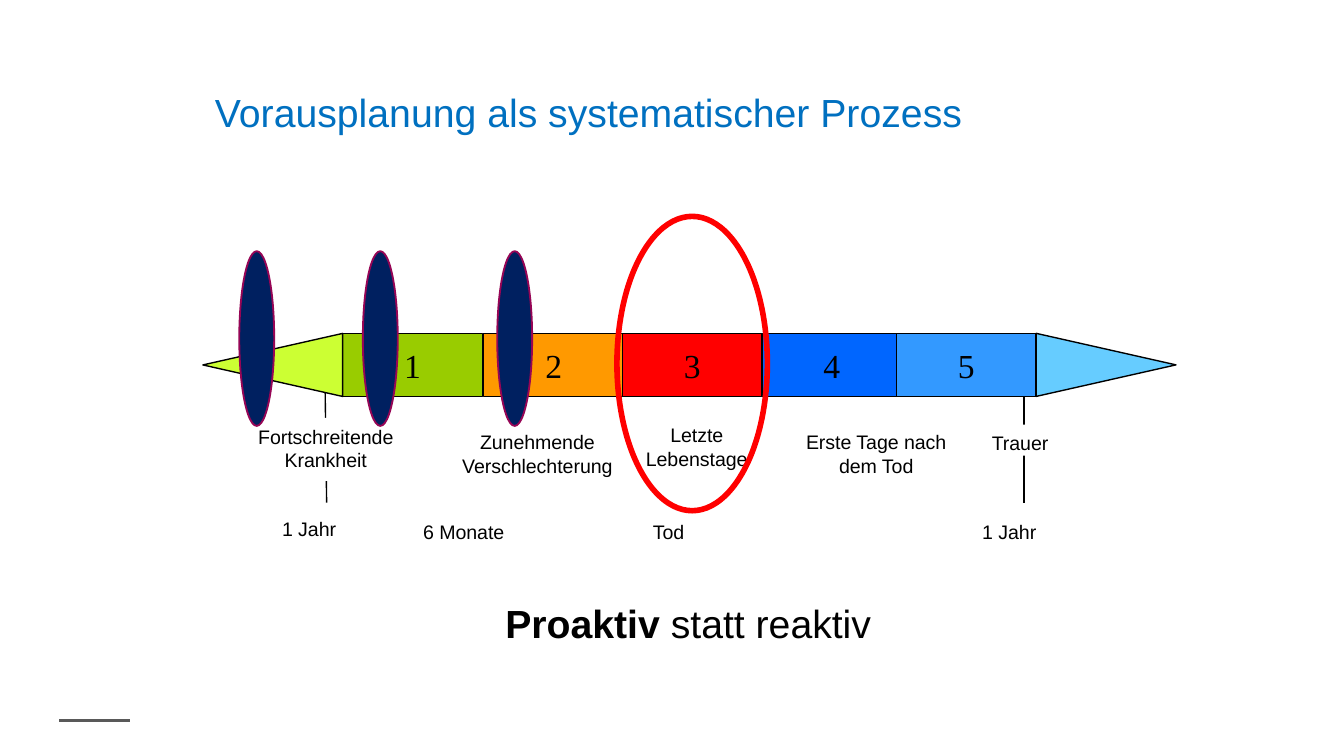
from lxml import etree
from pptx import Presentation
from pptx.dml.color import RGBColor
from pptx.enum.shapes import MSO_CONNECTOR, MSO_SHAPE
from pptx.enum.text import MSO_ANCHOR, PP_ALIGN
from pptx.oxml.ns import qn
from pptx.util import Pt

RECT, OVAL, TRIANGLE = MSO_SHAPE.RECTANGLE, MSO_SHAPE.OVAL, MSO_SHAPE.ISOSCELES_TRIANGLE
LEFT, CENTER = PP_ALIGN.LEFT, PP_ALIGN.CENTER
TOP, MIDDLE = MSO_ANCHOR.TOP, MSO_ANCHOR.MIDDLE

THEME = {
    "sans": "Arial", "serif": "Times New Roman",
    "heading": 21, "number": 18, "label": 10.5,
    "text": "000000", "title": "0070C0", "paper": "FFFFFF", "rule": "595959",
    "ring": "FF0000", "oval": "002060", "oval_line": "960555",
    "past": "CCFF33", "future": "66CCFF",
}

TITLE = "Vorausplanung als systematischer Prozess"
SLOGAN = [("Proaktiv ", True), ("statt reaktiv", False)]

# number, left, fill
PHASES = [
    ("1", 183.6, "99CC00"),
    ("2", 259.2, "FF9900"),
    ("3", 333.4, "FF0000"),
    ("4", 408.2, "0066FF"),
    ("5", 480.2, "3399FF"),
]
# text, left, top, width, height
PHASE_LABELS = [
    ("Fortschreitende Krankheit", 128.9, 223.9, 91.4, 33.8),
    ("Zunehmende Verschlechterung", 235.4, 227, 105.1, 30.2),
    ("Letzte Lebenstage", 331.2, 223.2, 84.2, 33.1),
    ("Erste Tage nach dem Tod", 416.9, 227, 105.1, 33.1),
    ("Trauer", 507.6, 227.5, 77.8, 16.6),
]
TIME_LABELS = [
    ("1 Jahr", 144, 273.6, 57, 25),
    ("6 Monate", 219.6, 275, 68, 25),
    ("Tod", 342.7, 275, 57, 25),
    ("1 Jahr", 519.1, 275, 57, 25),
]
# x at the top, x at the bottom
TIME_MARKS = [(174.2, 175), (548.6, 548.6)]
OVAL_LEFTS = [128.2, 194.4, 266.4]

BAR_TOP, BAR_H, PHASE_W = 178.6, 33.8, 74.9


def rgb(value):
    return RGBColor.from_string(value)


def add_line(x1, y1, x2, y2, color, width):
    c = s.shapes.add_connector(MSO_CONNECTOR.STRAIGHT, Pt(x1), Pt(y1), Pt(x2), Pt(y2))
    c.line.color.rgb = rgb(color)
    c.line.width = Pt(width)
    etree.SubElement(c._element.spPr, qn("a:effectLst"))


def add_shape(kind, x, y, w, h, fill=None, line=None, width=0.75, rotation=0):
    sp = s.shapes.add_shape(kind, Pt(x), Pt(y), Pt(w), Pt(h))
    sp.shadow.inherit = False
    sp.rotation = rotation
    if fill:
        sp.fill.solid()
        sp.fill.fore_color.rgb = rgb(fill)
    else:
        sp.fill.background()
    if line:
        sp.line.color.rgb = rgb(line)
        sp.line.width = Pt(width)
    else:
        sp.line.fill.background()
    return sp


def set_text(sp, text, size="label", font="sans", color="text", align=CENTER, anchor=TOP):
    """Fill a shape with one paragraph; text is a string or (text, bold) pairs."""
    tf = sp.text_frame
    tf.word_wrap = True
    tf.vertical_anchor = anchor
    p = tf.paragraphs[0]
    p.alignment = align
    for part, bold in [(text, False)] if isinstance(text, str) else text:
        r = p.add_run()
        r.text = part
        r.font.name = THEME[font]
        r.font.size = Pt(THEME[size])
        r.font.bold = bold
        r.font.color.rgb = rgb(THEME[color])
    return tf


def add_tip(x, fill, rotation):
    """Place a sideways triangle whose visible left edge is x."""
    shift = (PHASE_W - BAR_H) / 2
    add_shape(TRIANGLE, x + shift, BAR_TOP - shift, BAR_H, PHASE_W,
              fill, THEME["text"], rotation=rotation)


prs = Presentation()
prs.slide_width, prs.slide_height = Pt(720), Pt(405)
s = prs.slides.add_slide(prs.slide_layouts[6])

add_line(31.7, 385.9, 69.8, 385.9, THEME["rule"], 1.5)
for x1, x2 in TIME_MARKS:
    add_line(x1, 209.5, x2, 269.3, THEME["text"], 0.75)

for number, x, fill in PHASES:
    sp = add_shape(RECT, x, BAR_TOP, PHASE_W, BAR_H, fill, THEME["text"])
    set_text(sp, number, size="number", font="serif", anchor=MIDDLE)
add_tip(PHASES[0][1] - PHASE_W, THEME["past"], 270)
add_tip(PHASES[-1][1] + PHASE_W, THEME["future"], 90)

for text, *box in PHASE_LABELS:
    set_text(add_shape(RECT, *box, fill=THEME["paper"]), text)
for text, *box in TIME_LABELS:
    set_text(s.shapes.add_textbox(*map(Pt, box)), text, align=LEFT)

add_shape(OVAL, 330.5, 115.9, 80.6, 157.7, line=THEME["ring"], width=3)
for x in OVAL_LEFTS:
    add_shape(OVAL, x, 134.6, 18.7, 93.6, THEME["oval"], THEME["oval_line"], 1)

set_text(add_shape(RECT, 185.8, 317.5, 365.8, 32.4, THEME["paper"]), SLOGAN, size="heading")
title = s.shapes.add_textbox(Pt(115.2), Pt(36.7), Pt(489.6), Pt(46))
tf = set_text(title, TITLE, size="heading", color="title", align=LEFT, anchor=MIDDLE)
tf.margin_left = tf.margin_right = tf.margin_top = tf.margin_bottom = 0

prs.save("out.pptx")
